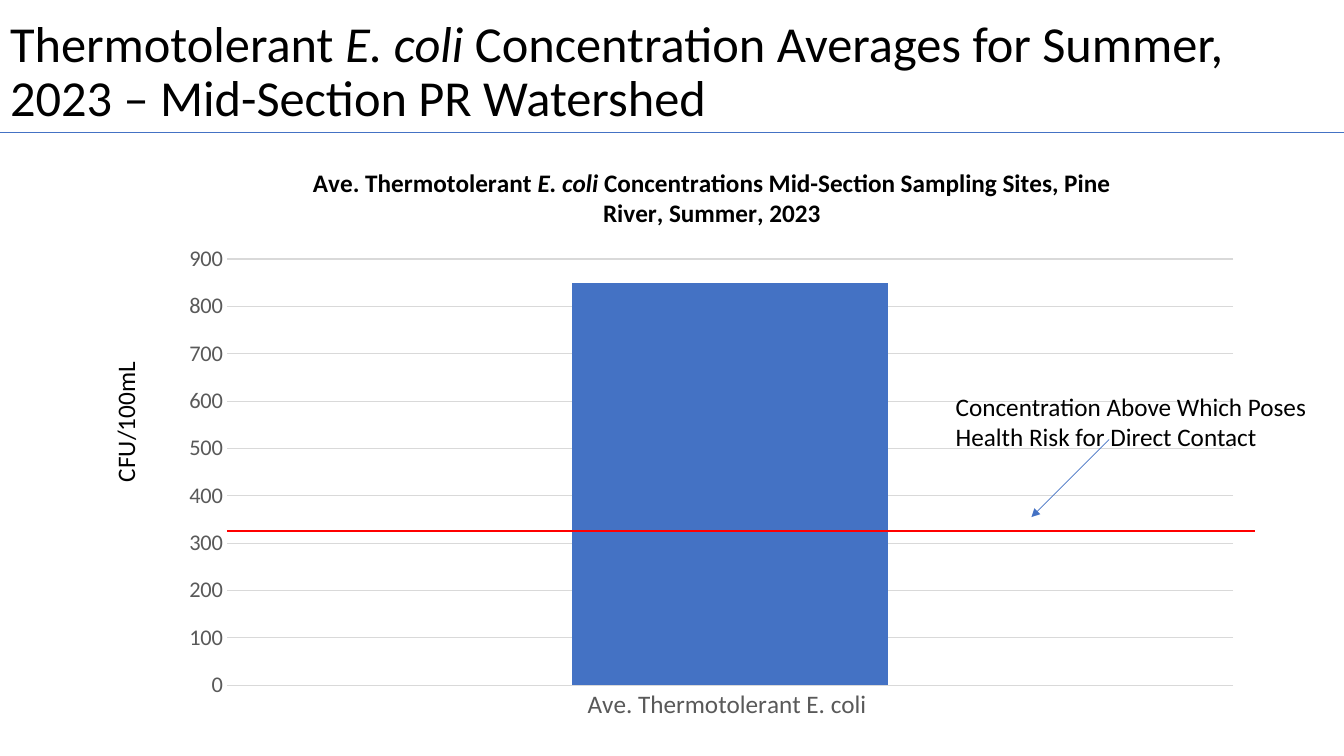
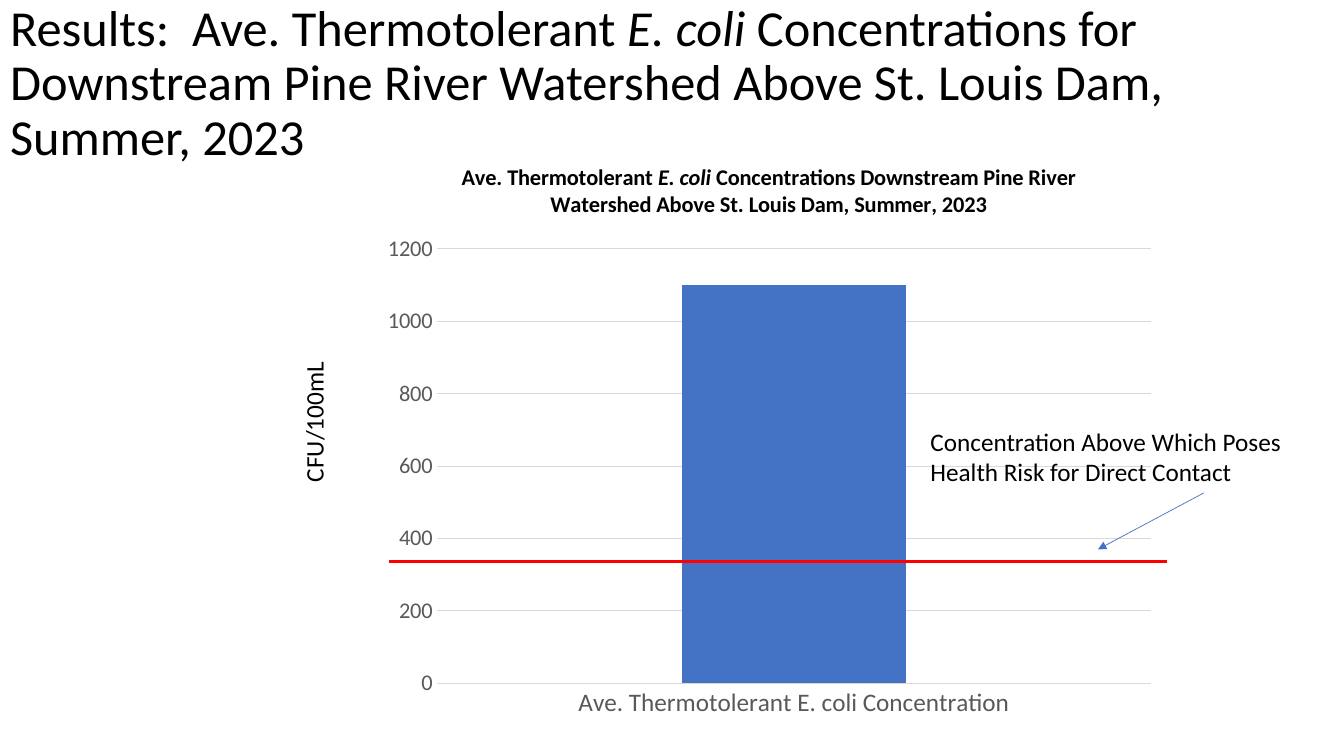
from dataclasses import dataclass

from lxml.etree import SubElement
from pptx import Presentation
from pptx.chart.data import CategoryChartData
from pptx.dml.color import RGBColor
from pptx.enum.chart import XL_CHART_TYPE as ChartType, XL_TICK_MARK as TickMark
from pptx.enum.shapes import MSO_CONNECTOR as Connector
from pptx.enum.text import MSO_ANCHOR as Anchor, MSO_AUTO_SIZE as AutoSize, PP_ALIGN as Align
from pptx.oxml import parse_xml
from pptx.oxml.ns import nsdecls, qn
from pptx.util import Emu, Pt

PX = 9144  # 100 px to the inch
SLIDE_SIZE = (1333, 750)


@dataclass(frozen=True)
class Theme:
    face: str = "Calibri"
    ink: str = "000000"
    muted: str = "595959"
    grid: str = "D9D9D9"
    accent: str = "4472C4"
    limit: str = "FF0000"
    title_size: int = 36
    body_size: int = 18
    tick_size: int = 16
    thin: float = 0.5
    grid_width: float = 0.75


THEME = Theme()

UNIT = ["CFU/100mL"]
LIMIT_NOTE = ["Concentration Above Which Poses", "Health Risk for Direct Contact"]
UNIT_SIZE = (140, 40)
NOTE_SIZE = (378, 71)

# Asterisks enclose italic words; boxes are left, top, width, height,
# and lines are from x, from y, to x, to y.
SLIDES = [
    {
        "title": "Thermotolerant *E. coli *Concentration Averages for Summer, "
                 "2023 – Mid-Section PR Watershed",
        "title_box": (0, 0, 1333, 145),
        "title_rule": (0, 131, 1333, 131),
        "chart_title": "Ave. Thermotolerant *E. coli *Concentrations Mid-Section "
                       "Sampling Sites, Pine River, Summer, 2023",
        "chart_title_size": 18,
        "chart_box": (167, 145, 1078, 582),
        "plot_box": (225, 257, 998, 423),
        "category": "Ave. Thermotolerant E. coli ",
        "concentration": 850,
        "scale": {"minimum_scale": 0, "maximum_scale": 900, "major_unit": 100},
        "unit_at": (54, 398),
        "limit_line": (225, 527, 1245, 527),
        "limit_width": 1.75,
        "note_at": (938, 383),
        "arrow": (1100, 436, 1023, 513),
    },
    {
        "title": "Results:  Ave. Thermotolerant *E. coli *Concentrations for "
                 "Downstream Pine River Watershed Above St. Louis Dam, Summer, 2023",
        "title_box": (0, 2, 1333, 164),
        "title_rule": None,
        "chart_title": "Ave. Thermotolerant *E. coli *Concentrations Downstream "
                       "Pine River Watershed Above St. Louis Dam, Summer, 2023",
        "chart_title_size": 16,
        "chart_box": (368, 141, 789, 582),
        "plot_box": (433, 247, 709, 431),
        "category": "Ave. Thermotolerant E. coli Concentration",
        "concentration": 1100,
        "scale": {"minimum_scale": 0, "maximum_scale": 1200, "major_unit": 200},
        "unit_at": (241, 398),
        "limit_line": (386, 557, 1157, 557),
        "limit_width": 2,
        "note_at": (913, 418),
        "arrow": (1194, 489, 1089, 545),
    },
]


def px(*lengths):
    return [Emu(length * PX) for length in lengths]


def set_all(target, **values):
    for name, value in values.items():
        setattr(target, name, value)


def style_font(font, size, color=THEME.ink, **extra):
    set_all(font, name=THEME.face, size=Pt(size), **extra)
    font.color.rgb = RGBColor.from_string(color)


def style_line(line, color, width):
    line.color.rgb = RGBColor.from_string(color)
    line.width = Pt(width)


def write_marked(paragraph, marked, size, **extra):
    """Write text as runs, with the parts between asterisks in italics."""
    for index, part in enumerate(marked.split("*")):
        run = paragraph.add_run()
        run.text = part
        style_font(run.font, size, italic=index % 2 == 1, **extra)


def add_title(slide, marked, box):
    title = slide.shapes.title
    set_all(title, **dict(zip(("left", "top", "width", "height"), px(*box))))
    frame = title.text_frame
    set_all(frame, word_wrap=True, auto_size=AutoSize.NONE, vertical_anchor=Anchor.MIDDLE)
    paragraph = frame.paragraphs[0]
    set_all(paragraph, alignment=Align.LEFT, line_spacing=0.9)
    write_marked(paragraph, marked, THEME.title_size)


def add_line(slide, ends, color, width, arrow=False):
    connector = slide.shapes.add_connector(Connector.STRAIGHT, *px(*ends))
    style_line(connector.line, color, width)
    properties = connector._element.spPr
    if arrow:
        SubElement(properties.find(qn("a:ln")), qn("a:tailEnd"), type="triangle")
    SubElement(properties, qn("a:effectLst"))


def add_label(slide, lines, corner, size, rotation=0):
    label = slide.shapes.add_textbox(*px(*corner, *size))
    label.rotation = rotation
    frame = label.text_frame
    set_all(frame, word_wrap=False, auto_size=AutoSize.SHAPE_TO_FIT_TEXT)
    for index, line in enumerate(lines):
        paragraph = frame.add_paragraph() if index else frame.paragraphs[0]
        write_marked(paragraph, line, THEME.body_size)


def place_plot(chart, chart_box, plot_box):
    """Fix the inner plot area, given in slide px, as shares of the chart."""
    left, top, width, height = chart_box
    plot_left, plot_top, plot_width, plot_height = plot_box
    shares = {
        "x": (plot_left - left) / width,
        "y": (plot_top - top) / height,
        "w": plot_width / width,
        "h": plot_height / height,
    }
    settings = "".join(f'<c:{edge}Mode val="edge"/>' for edge in "xy")
    settings += "".join(f'<c:{key} val="{share:.4f}"/>' for key, share in shares.items())
    plot_area = chart._chartSpace.chart.plotArea
    for old in plot_area.findall(qn("c:layout")):
        plot_area.remove(old)
    plot_area.insert(0, parse_xml(
        f'<c:layout {nsdecls("c")}><c:manualLayout><c:layoutTarget val="inner"/>'
        f"{settings}</c:manualLayout></c:layout>"))


def add_concentration_chart(slide, content):
    data = CategoryChartData()
    data.categories = [content["category"]]
    data.add_series("Series 1", [content["concentration"]])
    chart = slide.shapes.add_chart(
        ChartType.COLUMN_CLUSTERED, *px(*content["chart_box"]), data).chart
    set_all(chart, has_legend=False, has_title=True)
    style_font(chart.font, 10)
    heading = chart.chart_title
    heading.include_in_layout = False
    write_marked(heading.text_frame.paragraphs[0], content["chart_title"],
                 content["chart_title_size"], bold=True)

    bars = chart.plots[0]
    set_all(bars, gap_width=219, overlap=-27, vary_by_categories=False)
    fill = bars.series[0].format.fill
    fill.solid()
    fill.fore_color.rgb = RGBColor.from_string(THEME.accent)

    sites, values = chart.category_axis, chart.value_axis
    for axis, size in ((sites, THEME.body_size), (values, THEME.tick_size)):
        set_all(axis, major_tick_mark=TickMark.NONE, minor_tick_mark=TickMark.NONE)
        style_font(axis.tick_labels.font, size, THEME.muted)
    style_line(sites.format.line, THEME.grid, THEME.grid_width)
    set_all(values, has_major_gridlines=True, **content["scale"])
    values.format.line.fill.background()
    style_line(values.major_gridlines.format.line, THEME.grid, THEME.grid_width)
    place_plot(chart, content["chart_box"], content["plot_box"])


def build_slide(deck, content):
    slide = deck.slides.add_slide(deck.slide_layouts.get_by_name("Title Only"))
    add_title(slide, content["title"], content["title_box"])
    add_concentration_chart(slide, content)
    if content["title_rule"]:
        add_line(slide, content["title_rule"], THEME.accent, THEME.thin)
    add_label(slide, UNIT, content["unit_at"], UNIT_SIZE, rotation=270)
    add_line(slide, content["limit_line"], THEME.limit, content["limit_width"])
    add_label(slide, LIMIT_NOTE, content["note_at"], NOTE_SIZE)
    add_line(slide, content["arrow"], THEME.accent, THEME.thin, arrow=True)


def main():
    deck = Presentation()
    deck.slide_width, deck.slide_height = px(*SLIDE_SIZE)
    for content in SLIDES:
        build_slide(deck, content)
    deck.save("out.pptx")


if __name__ == "__main__":
    main()
